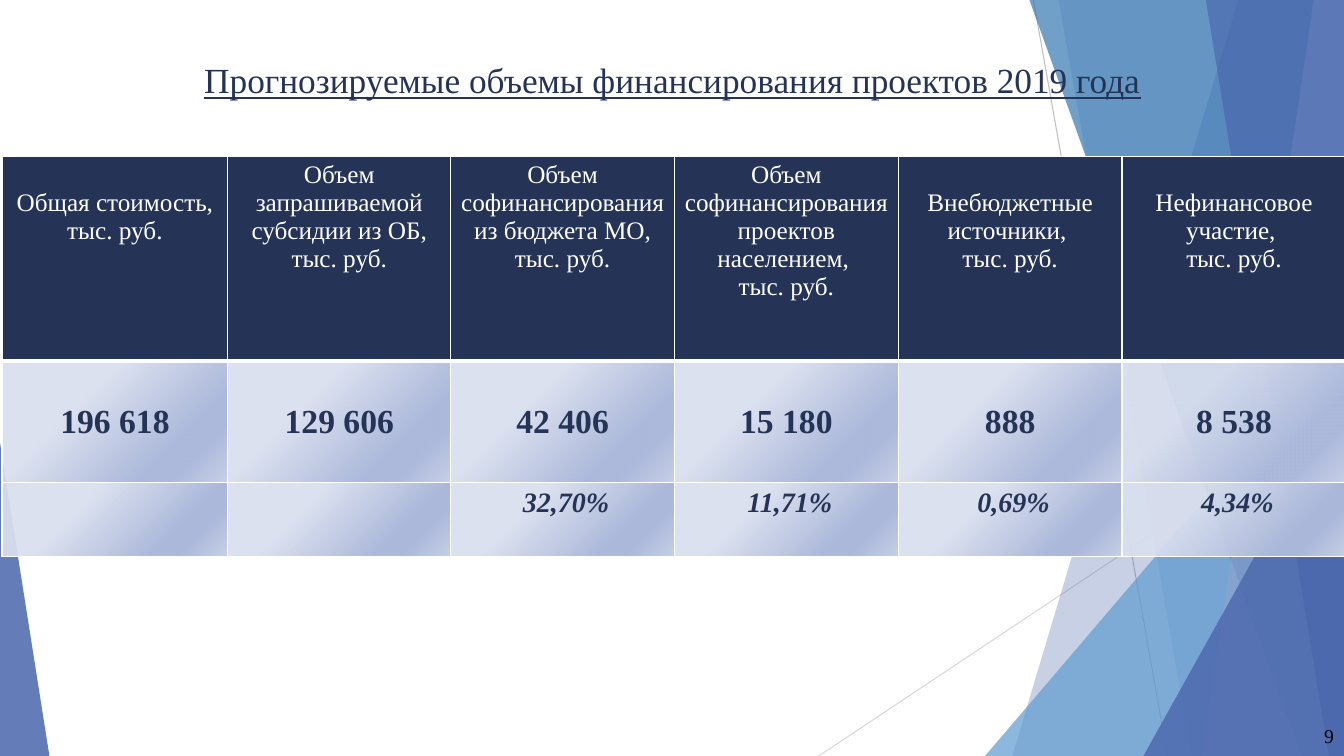
from pptx import Presentation
from pptx.dml.color import RGBColor
from pptx.enum.shapes import MSO_CONNECTOR, MSO_SHAPE
from pptx.enum.text import MSO_ANCHOR as Anchor, PP_ALIGN as Align
from pptx.oxml import parse_xml
from pptx.oxml.ns import nsdecls, qn
from pptx.util import Inches, Pt
from lxml.etree import SubElement

FONT = "Times New Roman"
WIDTH, HEIGHT = 13.33, 7.5
COLORS = {
    "navy": "253356", "white": "FFFFFF", "black": "000000",
    "blue": "4A66AC", "sky": "629DD1", "steel": "3477B2", "lavender": "90A2CF",
    "gray": "BFBFBF", "light_gray": "D9D9D9",
    "pale": "DAE0EF", "periwinkle": "ACB9DB", "mist": "C8D1E7",
}
GRADIENT = [(34, "pale", 93), (74, "periwinkle", 100), (83, "periwinkle", 100), (100, "mist", 100)]
RAYS = [("gray", (10.25, 0), (11.58, 7.5)), ("light_gray", (13.33, 4.03), (8.12, 7.5))]
FACETS = [
    ("band", (12.28, 10.04), "blue", 30),
    ("band", (10.5, 11.82), "blue", 20),
    ("triangle", (9.77, 3.33, 3.56, 1), "sky", 72),
    ("band", (10.21, 12.91), "steel", 70),
    ("band", (13.03, 11.92), "lavender", 70),
    ("band", (11.96, 13.18), "blue", 65),
    ("triangle", (11.34, 3.93, 1.99, 1), "blue", 80),
    ("triangle", (0, 4.39, 0.49, 0), "blue", 85),
]
COLUMNS = [
    (["Общая стоимость, тыс. руб."], True, "196 618", ""),
    (["Объем запрашиваемой субсидии из ОБ, тыс. руб."], False, "129 606", ""),
    (["Объем софинансирования из бюджета МО, тыс. руб."], False, "42 406", " 32,70%"),
    (["Объем софинансирования проектов населением, ", "тыс. руб."], False, "15 180", " 11,71%"),
    (["Внебюджетные источники, ", "тыс. руб."], True, "888", " 0,69%"),
    (["Нефинансовое участие, ", "тыс. руб."], True, "8 538", " 4,34%"),
]
COLUMN_WIDTHS = [2.24, 2.21] + [2.22] * 4
ROW_HEIGHTS = [2.03, 1.21, 0.73]
TITLE_STYLE = {"size": Pt(25.2), "underline": True}
NUMBER_STYLE = {"size": Pt(14)}
HEADER_STYLE = {"size": Pt(18), "bold": False}
VALUE_STYLE = {"size": Pt(24), "bold": True}
PERCENT_STYLE = {"size": Pt(20), "bold": True, "italic": True}


def rgb(name):
    """Return the named colour."""
    return RGBColor.from_string(COLORS[name])


def write(frame, lines, style, color, align):
    """Write one paragraph per line in the given style."""
    for index, line in enumerate(lines):
        paragraph = frame.paragraphs[0] if index == 0 else frame.add_paragraph()
        paragraph.alignment = align
        run = paragraph.add_run()
        run.text = line
        run.font.color.rgb = rgb(color)
        for name, value in {"name": FONT, **style}.items():
            setattr(run.font, name, value)


def add_text(slide, box, text, style, color, align, anchor):
    """Place a one-line text box."""
    frame = slide.shapes.add_textbox(*map(Inches, box)).text_frame
    frame.word_wrap = True
    frame.vertical_anchor = anchor
    write(frame, [text], style, color, align)


def add_ray(slide, color, start, end):
    """Draw a thin background line."""
    line = slide.shapes.add_connector(MSO_CONNECTOR.STRAIGHT, *map(Inches, start + end))
    line.line.color.rgb = rgb(color)
    line.line.width = Pt(0.75)
    SubElement(line._element.spPr, qn("a:effectLst"))


def add_facet(slide, kind, geometry, color, opacity):
    """Draw a translucent facet: a band to the right edge or a bottom triangle."""
    if kind == "band":
        top, bottom = geometry
        builder = slide.shapes.build_freeform(Inches(top), 0)
        corners = [(WIDTH, 0), (WIDTH, HEIGHT), (bottom, HEIGHT)]
        builder.add_line_segments([tuple(map(Inches, corner)) for corner in corners], close=True)
        shape = builder.convert_to_shape()
    else:
        left, top, width, apex = geometry
        box = left, top, width, HEIGHT - top
        shape = slide.shapes.add_shape(MSO_SHAPE.ISOSCELES_TRIANGLE, *map(Inches, box))
        shape.adjustments[0] = apex
    shape.shadow.inherit = False
    shape.line.fill.background()
    shape.fill.solid()
    shape.fill.fore_color.rgb = rgb(color)
    fill_color = shape._element.spPr.find(qn("a:solidFill"))[0]
    SubElement(fill_color, qn("a:alpha"), val=str(opacity * 1000))


def add_borders(cell, top, bottom):
    """Give a cell white borders of the given top and bottom widths."""
    properties = cell._tc.get_or_add_tcPr()
    for index, (side, width) in enumerate({"L": 1, "R": 1, "T": top, "B": bottom}.items()):
        properties.insert(index, parse_xml(
            f'<a:ln{side} {nsdecls("a")} w="{Pt(width)}"><a:solidFill>'
            f'<a:srgbClr val="{COLORS["white"]}"/></a:solidFill></a:ln{side}>'))


def add_gradient(cell):
    """Fill a cell with the diagonal gradient."""
    stops = "".join(
        f'<a:gs pos="{position * 1000}"><a:srgbClr val="{COLORS[color]}">'
        f'<a:alpha val="{opacity * 1000}"/></a:srgbClr></a:gs>'
        for position, color, opacity in GRADIENT)
    cell._tc.get_or_add_tcPr().append(parse_xml(
        f'<a:gradFill {nsdecls("a")}><a:gsLst>{stops}</a:gsLst>'
        '<a:lin ang="2700000" scaled="0"/></a:gradFill>'))


def add_funding_table(slide, left, top):
    """Build the funding table with its header, amounts and shares."""
    size = sum(COLUMN_WIDTHS), sum(ROW_HEIGHTS)
    table = slide.shapes.add_table(
        len(ROW_HEIGHTS), len(COLUMNS), *map(Inches, (left, top) + size)).table
    table.horz_banding = False
    for row, height in zip(table.rows, ROW_HEIGHTS):
        row.height = Inches(height)
    for index, (header, lowered, value, percent) in enumerate(COLUMNS):
        table.columns[index].width = Inches(COLUMN_WIDTHS[index])
        head, amount, share = (table.cell(row, index) for row in range(3))
        for cell in (head, amount, share):
            cell.margin_left = cell.margin_right = Inches(0.08)
        head.fill.solid()
        head.fill.fore_color.rgb = rgb("navy")
        head.margin_top = Inches(0.33 if lowered else 0.05)
        amount.vertical_anchor = Anchor.MIDDLE
        add_gradient(amount)
        add_gradient(share)
        add_borders(head, 1, 3)
        add_borders(amount, 3, 1)
        add_borders(share, 1, 1)
        write(head.text_frame, header, HEADER_STYLE, "white", Align.CENTER)
        write(amount.text_frame, [value], VALUE_STYLE, "navy", Align.CENTER)
        if percent:
            write(share.text_frame, [percent], PERCENT_STYLE, "navy", Align.CENTER)


def add_background(slide):
    """Draw the rays and facets behind the content."""
    for ray in RAYS:
        add_ray(slide, *ray)
    for facet in FACETS:
        add_facet(slide, *facet)


def main():
    """Build and save the slide."""
    presentation = Presentation()
    presentation.slide_width, presentation.slide_height = Inches(WIDTH), Inches(HEIGHT)
    slide = presentation.slides.add_slide(presentation.slide_layouts[6])
    add_background(slide)
    add_text(slide, (0.01, 0.53, 13.32, 0.93),
             "Прогнозируемые объемы финансирования проектов 2019 года",
             TITLE_STYLE, "navy", Align.CENTER, Anchor.TOP)
    add_funding_table(slide, 0.02, 1.55)
    add_text(slide, (10.33, 7.1, 3, 0.4), "9", NUMBER_STYLE, "black", Align.RIGHT, Anchor.MIDDLE)
    presentation.save("out.pptx")


if __name__ == "__main__":
    main()
